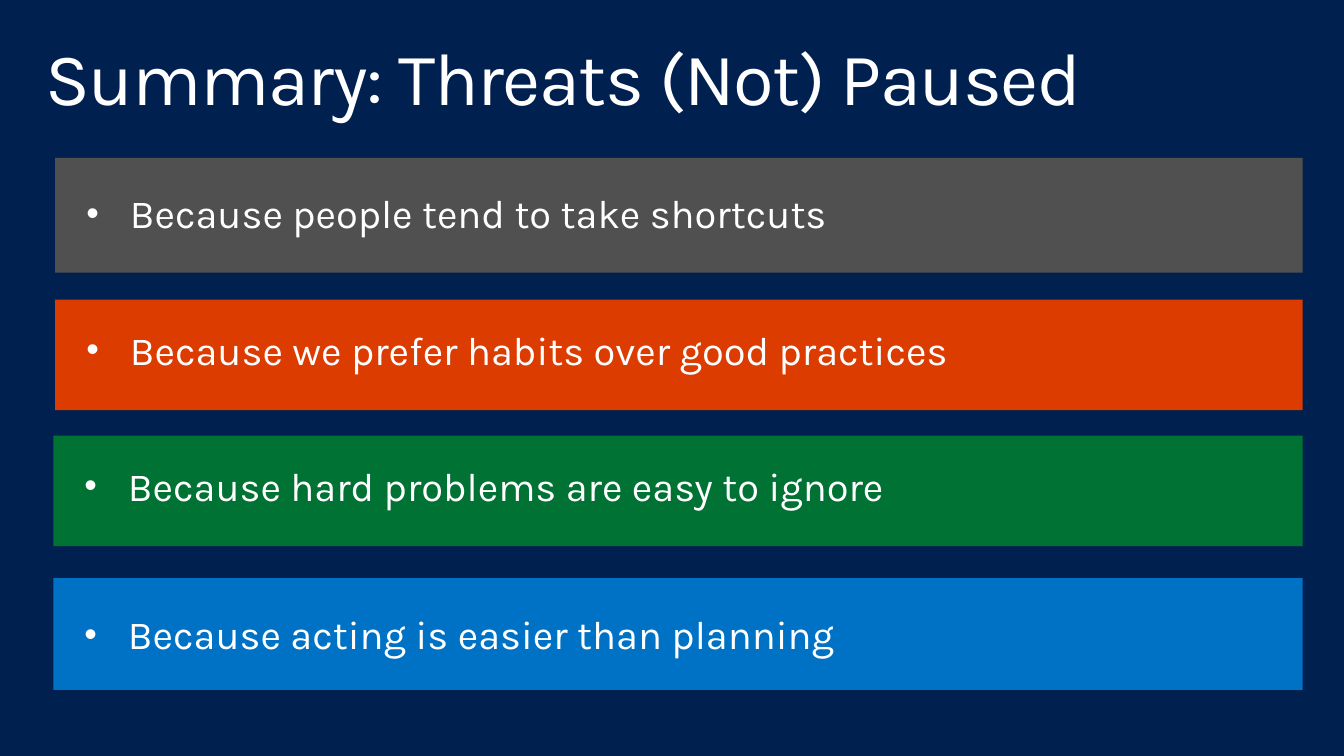
from lxml.etree import SubElement as Sub
from pptx import Presentation as Deck
from pptx.dml.color import RGBColor as RGB
from pptx.enum.shapes import MSO_SHAPE as Kind
from pptx.enum.text import MSO_ANCHOR as Anchor
from pptx.oxml.ns import qn
from pptx.util import Cm, Pt

NAVY = RGB(0x00, 0x20, 0x50)
WHITE = RGB(0xFF, 0xFF, 0xFF)
GREY = RGB(0x50, 0x50, 0x50)
ORANGE = RGB(0xDC, 0x3C, 0x00)
GREEN = RGB(0x00, 0x72, 0x33)
BLUE = RGB(0x00, 0x72, 0xC6)

RIGHT = 33.48
INSET = 0.24
TITLE = {
    "margin_left": Cm(0.41), "margin_right": Cm(0.41),
    "margin_top": Cm(0.25), "margin_bottom": Cm(0.25),
    "vertical_anchor": Anchor.TOP, "word_wrap": True,
}
POINT = {
    "margin_left": Cm(0.51), "margin_right": Cm(0.25),
    "margin_top": Cm(0.13), "margin_bottom": Cm(0.13),
    "vertical_anchor": Anchor.MIDDLE, "word_wrap": True,
}
BARS = [
    (1.42, 4.06, 2.95, 4.72, GREY, "Because people tend to take shortcuts"),
    (1.42, 7.7, 2.84, 8.23, ORANGE, "Because we prefer habits over good practices"),
    (1.37, 11.2, 2.84, 11.73, GREEN, "Because hard problems are easy to ignore"),
    (1.37, 14.86, 2.87, 15.54, BLUE, "Because acting is easier than planning"),
]


def write(slide, box, text, size, form):
    frame = slide.shapes.add_textbox(*map(Cm, box)).text_frame
    for name, value in form.items():
        setattr(frame, name, value)
    para = frame.paragraphs[0]
    run = para.add_run()
    run.text = text
    run.font.name = "Karla"
    run.font.size = Pt(size)
    run.font.color.rgb = WHITE
    return para


deck = Deck()
deck.slide_width = Cm(34.54)
deck.slide_height = Cm(19.43)
slide = deck.slides.add_slide(deck.slide_layouts[6])
slide.background.fill.solid()
slide.background.fill.fore_color.rgb = NAVY

title = write(slide, (0.76, 0.81, 33.02, 2.54), "Summary: Threats (Not) Paused", 54, TITLE)
title.line_spacing = 0.9
title.runs[0].font._element.set("spc", "-100")

for left, top, height, line, color, text in BARS:
    bar = slide.shapes.add_shape(
        Kind.RECTANGLE, Cm(left), Cm(top), Cm(RIGHT - left), Cm(height))
    bar.shadow.inherit = False
    bar.fill.solid()
    bar.fill.fore_color.rgb = color
    bar.line.fill.background()

    box = (left + INSET, line, RIGHT - left - INSET, 1.5)
    props = write(slide, box, text, 29, POINT)._p.get_or_add_pPr()
    props.set("marL", str(Cm(1.17)))
    props.set("indent", str(Cm(-1.12)))
    Sub(props, qn("a:buSzPct"), val="90000")
    Sub(props, qn("a:buFont"), typeface="Arial")
    Sub(props, qn("a:buChar"), char="•")

deck.save("out.pptx")
